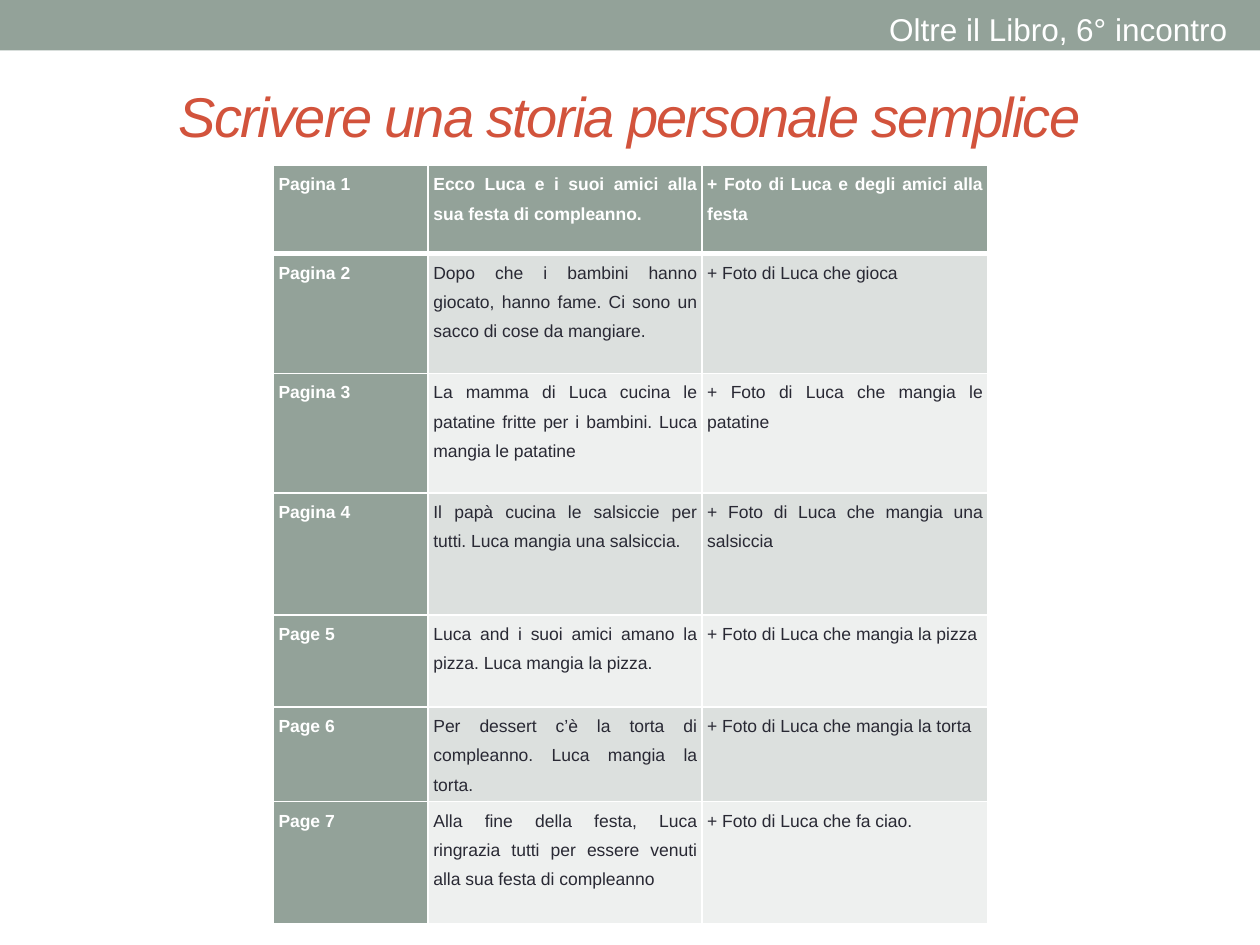
"""Build the slide on writing a simple personal story, with its page table."""
from lxml import etree
from pptx import Presentation
from pptx.dml.color import RGBColor
from pptx.enum.shapes import MSO_SHAPE
from pptx.enum.text import MSO_ANCHOR, PP_ALIGN
from pptx.oxml.ns import qn
from pptx.util import Pt

RECT = MSO_SHAPE.RECTANGLE
MIDDLE = MSO_ANCHOR.MIDDLE
LEFT, CENTER, JUSTIFY = PP_ALIGN.LEFT, PP_ALIGN.CENTER, PP_ALIGN.JUSTIFY

FONT = "Arial"
GREEN, RED, DARK, WHITE = "93A299", "D2533C", "292934", "FFFFFF"
BANDS = ("EEF0EF", "DCE0DE")

HEADER = "Oltre il Libro, 6° incontro"
TITLE = "Scrivere una storia personale semplice"
COLS = (88.5, 156.5, 163.3)
PAGES = [
    (50.4, "Pagina 1", "Ecco Luca e i suoi amici alla sua festa di compleanno.",
     "+ Foto di Luca e degli amici alla festa"),
    (68.4, "Pagina 2",
     "Dopo che i bambini hanno giocato, hanno fame. Ci sono un sacco di cose da mangiare.",
     "+ Foto di Luca che gioca"),
    (68.4, "Pagina 3",
     "La mamma di Luca cucina le patatine fritte per i bambini. Luca mangia le patatine",
     "+ Foto di Luca che mangia le patatine"),
    (69.8, "Pagina 4", "Il papà cucina le salsiccie per tutti. Luca mangia una salsiccia.",
     "+ Foto di Luca che mangia una salsiccia"),
    (52.5, "Page 5", "Luca and i suoi amici amano la pizza. Luca mangia la pizza.",
     "+ Foto di Luca che mangia la pizza"),
    (52.5, "Page 6", "Per dessert c’è la torta di compleanno. Luca mangia la torta.",
     "+ Foto di Luca che mangia la torta"),
    (69.8, "Page 7",
     "Alla fine della festa, Luca ringrazia tutti per essere venuti alla sua festa di compleanno",
     "+ Foto di Luca che fa ciao."),
]


def rgb(color):
    return RGBColor.from_string(color)


def write(tf, text, size, color, align, bold=False, italic=False):
    p = tf.paragraphs[0]
    p.alignment = align
    r = p.add_run()
    r.text = text
    font = r.font
    font.name, font.size, font.bold, font.italic = FONT, Pt(size), bold, italic
    font.color.rgb = rgb(color)
    return p, r


def add_text(s, box, text, size, color, align, wrap, italic=False):
    sp = s.shapes.add_textbox(*map(Pt, box))
    sp.text_frame.word_wrap = wrap
    _, r = write(sp.text_frame, text, size, color, align, italic=italic)
    return sp, r


def set_borders(cell, widths):
    tc_pr = cell._tc.get_or_add_tcPr()
    for i, (side, width) in enumerate(zip("LRTB", widths)):
        ln = etree.Element(qn(f"a:ln{side}"), w=str(Pt(width)))
        fill = etree.SubElement(ln, qn("a:solidFill"))
        etree.SubElement(fill, qn("a:srgbClr"), val=WHITE)
        tc_pr.insert(i, ln)


def add_pages(s, left, top):
    heights = [page[0] for page in PAGES]
    frame = s.shapes.add_table(len(PAGES), len(COLS), Pt(left), Pt(top),
                               Pt(sum(COLS)), Pt(sum(heights)))
    table = frame.table
    for col, width in zip(table.columns, COLS):
        col.width = Pt(width)
    for i, (height, *texts) in enumerate(PAGES):
        table.rows[i].height = Pt(height)
        for j, text in enumerate(texts):
            cell = table.cell(i, j)
            head = i == 0 or j == 0
            cell.margin_left = cell.margin_right = Pt(3)
            cell.margin_top = cell.margin_bottom = 0
            cell.fill.solid()
            cell.fill.fore_color.rgb = rgb(GREEN if head else BANDS[i % 2])
            set_borders(cell, (1, 1, 3 if i == 1 else 1, 3 if i == 0 else 1))
            p, _ = write(cell.text_frame, text, 10, WHITE if head else DARK,
                         JUSTIFY, bold=head)
            p.line_spacing = 1.5


def main():
    prs = Presentation()
    prs.slide_width, prs.slide_height = Pt(720), Pt(540)
    s = prs.slides.add_slide(prs.slide_layouts[6])

    bar = s.shapes.add_shape(RECT, 0, 0, prs.slide_width, Pt(28.8))
    bar.shadow.inherit = False
    bar.fill.solid()
    bar.fill.fore_color.rgb = rgb(GREEN)
    bar.line.fill.background()

    title, r = add_text(s, (8.6, 20.9, 702.7, 90), TITLE, 32, RED, CENTER, True, italic=True)
    title.text_frame.vertical_anchor = MIDDLE
    r.font._element.set("spc", "-100")

    add_pages(s, 156.2, 94.5)
    add_text(s, (501, 2.2, 209.5, 28.8), HEADER, 18, WHITE, LEFT, False)
    prs.save("out.pptx")


if __name__ == "__main__":
    main()
